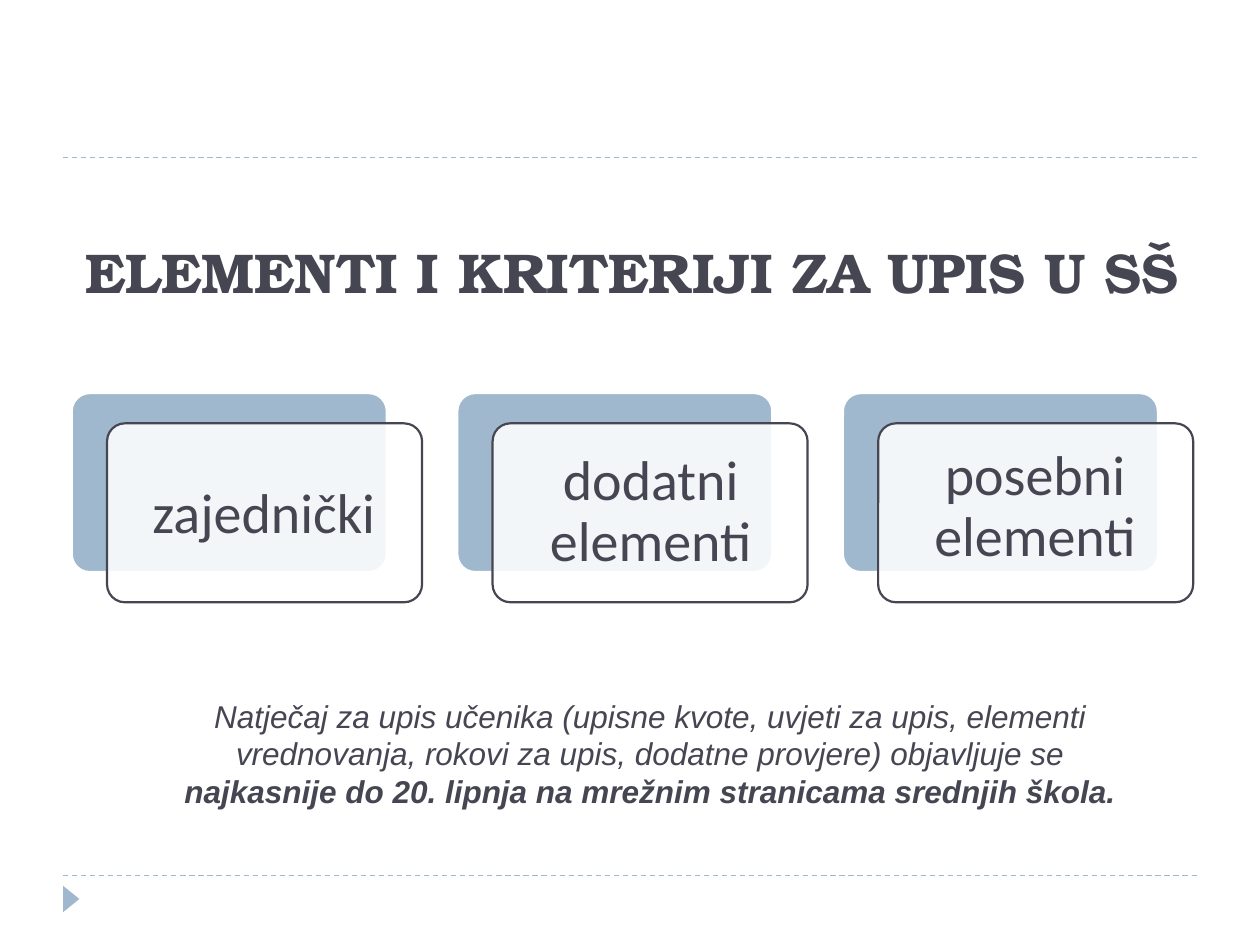
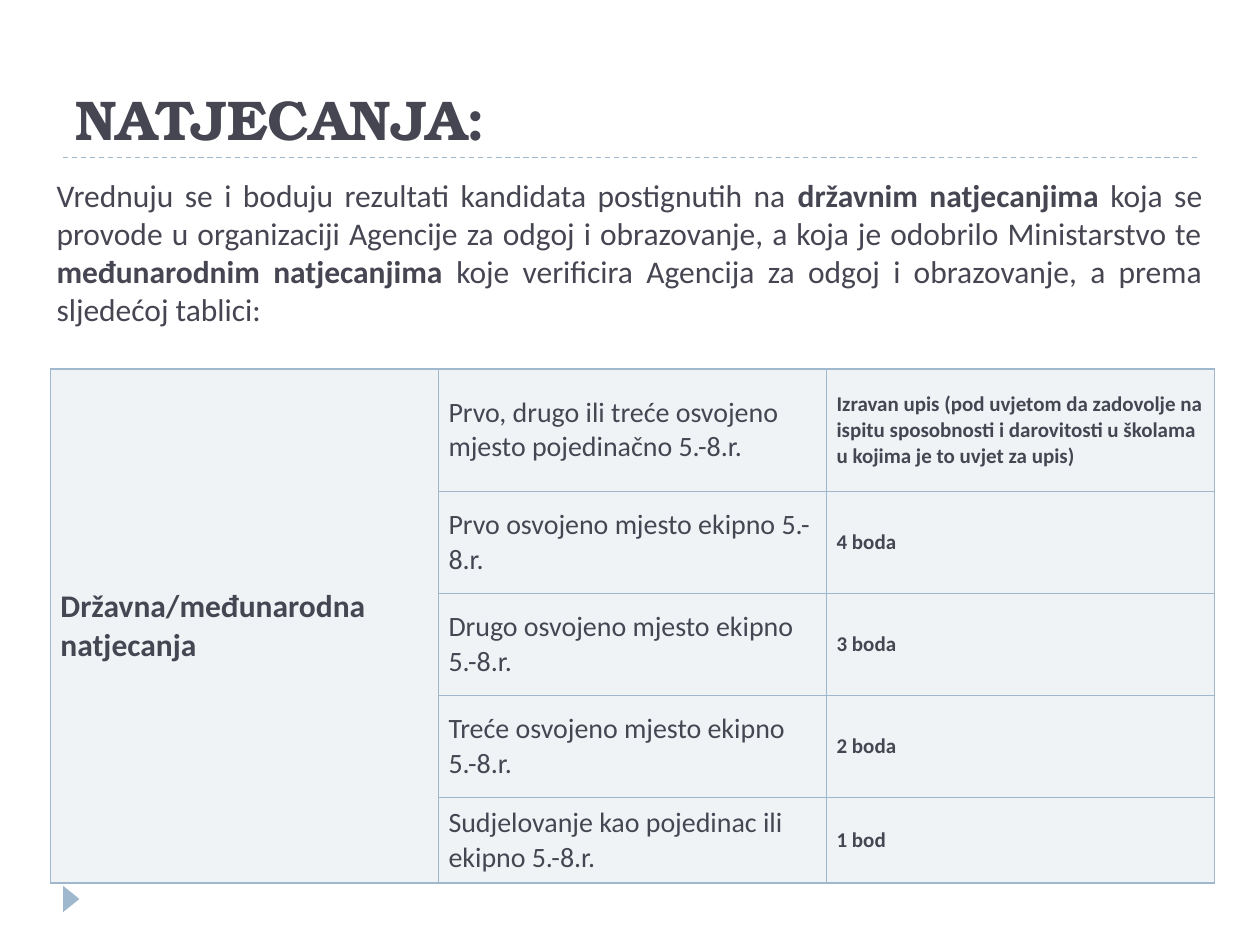
import pptx
import pptx.util
import pptx.dml.color
import pptx.enum.dml
import pptx.enum.shapes
import pptx.enum.text
import pptx.oxml.ns
from lxml import etree

Inches = pptx.util.Inches
Pt = pptx.util.Pt
qn = pptx.oxml.ns.qn
ALIGN = pptx.enum.text.PP_ALIGN
ANCHOR = pptx.enum.text.MSO_ANCHOR
SHAPE = pptx.enum.shapes.MSO_SHAPE

COLORS = {"ink": "464653", "blue": "9FB8CD", "white": "FFFFFF", "cell": "EFF3F6"}
TITLE_FONT, BODY_FONT, NOTE_FONT = "TeX Gyre Bonum", "Calibri", "Arial"
DIVIDERS = (6.95, 1.25)

CRITERIA_TITLE = "ELEMENTI I KRITERIJI ZA UPIS U SŠ"
CRITERIA = [
    ("zajednički", (0.73, 3.42, 2.73, 1.34)),
    ("dodatni elementi", (3.96, 3.4, 2.41, 1.34)),
    ("posebni elementi", (7.01, 3.36, 2.41, 1.34)),
]
CARD_LEFT, CARD_TOP, CARD_STEP = 0.57, 3.12, 3.06
CARD_SIZE = (2.5, 1.42)
FRONT_SHIFT = (0.28, 0.24)
DEADLINE = [
    ("Natječaj za upis učenika (upisne kvote, uvjeti za upis, elementi vrednovanja, "
     "rokovi za upis, dodatne provjere) objavljuje se ", False),
    ("najkasnije do 20. lipnja na mrežnim stranicama srednjih škola.", True),
]

CONTEST_TITLE = "NATJECANJA:"
CONTEST_INTRO = [
    ("Vrednuju se i boduju rezultati kandidata postignutih na ", False),
    ("državnim natjecanjima", True),
    (" koja se provode u organizaciji Agencije za odgoj i obrazovanje, "
     "a koja je odobrilo Ministarstvo te ", False),
    ("međunarodnim natjecanjima ", True),
    ("koje verificira Agencija za odgoj i obrazovanje, a prema sljedećoj tablici:", False),
]
CONTEST_LEVEL = "Državna/međunarodna natjecanja"
CONTEST_POINTS = [
    ("Prvo, drugo ili treće osvojeno mjesto pojedinačno 5.-8.r.",
     "Izravan upis (pod uvjetom da zadovolje na ispitu sposobnosti i darovitosti "
     "u školama u kojima je to uvjet za upis)"),
    ("Prvo osvojeno mjesto ekipno 5.-8.r.", "4 boda"),
    ("Drugo osvojeno mjesto ekipno 5.-8.r.", "3 boda"),
    ("Treće osvojeno mjesto ekipno 5.-8.r.", "2 boda"),
    ("Sudjelovanje kao pojedinac ili ekipno 5.-8.r.", "1 bod"),
]
ROW_HEIGHTS = (0.97, 0.81, 0.81, 0.81, 0.61)
COLUMN_WIDTH = 3.08
CELL_STYLES = [(18, True), (16, False), (12, True)]


def rgb(name):
    return pptx.dml.color.RGBColor.from_string(COLORS[name])


def write_runs(paragraph, runs, size, font, italic=None):
    for text, bold in runs:
        run = paragraph.add_run()
        run.text = text
        run.font.size = Pt(size)
        run.font.name = font
        run.font.bold = bold
        run.font.italic = italic
        run.font.color.rgb = rgb("ink")


def add_text(slide, box, runs, size, font, align, anchor=ANCHOR.TOP,
             inset=(0.1, 0.05), spacing=None, italic=None):
    frame = slide.shapes.add_textbox(*map(Inches, box)).text_frame
    frame.word_wrap = True
    frame.vertical_anchor = anchor
    frame.margin_left = frame.margin_right = Inches(inset[0])
    frame.margin_top = frame.margin_bottom = Inches(inset[1])
    paragraph = frame.paragraphs[0]
    paragraph.alignment = align
    paragraph.line_spacing = spacing
    write_runs(paragraph, runs, size, font, italic)


def add_filled(slide, kind, box, fill, line=None):
    shape = slide.shapes.add_shape(kind, *map(Inches, box))
    shape.shadow.inherit = False
    shape.fill.solid()
    shape.fill.fore_color.rgb = rgb(fill)
    if line:
        shape.line.color.rgb = rgb(line)
        shape.line.width = Pt(1.25)
    else:
        shape.line.fill.background()
    return shape


def start_slide(deck, title, title_box, title_align):
    slide = deck.slides.add_slide(deck.slide_layouts[6])
    for y in DIVIDERS:
        divider = slide.shapes.add_connector(
            pptx.enum.shapes.MSO_CONNECTOR.STRAIGHT,
            Inches(0.5), Inches(y), Inches(9.5), Inches(y))
        divider.line.color.rgb = rgb("blue")
        divider.line.width = Pt(0.75)
        divider.line.dash_style = pptx.enum.dml.MSO_LINE.DASH
        etree.SubElement(divider.element.spPr, qn("a:effectLst"))
    marker = add_filled(slide, SHAPE.ISOSCELES_TRIANGLE, (0.46, 7.07, 0.21, 0.13), "blue")
    marker.rotation = 90
    add_text(slide, title_box, [(title, True)], 32, TITLE_FONT, title_align, ANCHOR.BOTTOM)
    return slide


def add_card(slide, left, label, label_box):
    back_box = (left, CARD_TOP, *CARD_SIZE)
    front_box = (left + FRONT_SHIFT[0], CARD_TOP + FRONT_SHIFT[1], *CARD_SIZE)
    back = add_filled(slide, SHAPE.ROUNDED_RECTANGLE, back_box, "blue", "white")
    front = add_filled(slide, SHAPE.ROUNDED_RECTANGLE, front_box, "white", "ink")
    for layer in (back, front):
        layer.adjustments[0] = 0.1
    front_color = front.element.spPr.find(qn("a:solidFill")).find(qn("a:srgbClr"))
    etree.SubElement(front_color, qn("a:alpha"), val="88000")
    add_text(slide, label_box, [(label, None)], 32, BODY_FONT, ALIGN.CENTER,
             ANCHOR.MIDDLE, (0.19, 0.19), 0.9)


def style_cell(cell):
    cell.margin_left = cell.margin_right = Inches(0.08)
    cell.margin_top = cell.margin_bottom = Inches(0.04)
    cell.vertical_anchor = ANCHOR.MIDDLE
    properties = cell._tc.get_or_add_tcPr()
    for side in ("a:lnL", "a:lnR", "a:lnT", "a:lnB"):
        border = etree.SubElement(properties, qn(side), w=str(Pt(1)))
        border_fill = etree.SubElement(border, qn("a:solidFill"))
        etree.SubElement(border_fill, qn("a:srgbClr"), val=COLORS["blue"])
    cell.fill.solid()
    cell.fill.fore_color.rgb = rgb("cell")


def build_criteria(deck):
    slide = start_slide(deck, CRITERIA_TITLE, (0.52, 1.47, 9, 1), ALIGN.CENTER)
    for index, (label, label_box) in enumerate(CRITERIA):
        add_card(slide, CARD_LEFT + index * CARD_STEP, label, label_box)
    add_text(slide, (1.29, 5.48, 7.74, 1.01), DEADLINE, 18, NOTE_FONT,
             ALIGN.CENTER, italic=True)


def build_contests(deck):
    slide = start_slide(deck, CONTEST_TITLE, (0.5, 0.25, 9, 1), ALIGN.LEFT)
    add_text(slide, (0.35, 1.35, 9.29, 1.31), CONTEST_INTRO, 18, BODY_FONT, ALIGN.JUSTIFY)
    points = slide.shapes.add_table(
        len(CONTEST_POINTS), 3, Inches(0.4), Inches(2.93),
        Inches(3 * COLUMN_WIDTH), Inches(sum(ROW_HEIGHTS))).table
    points.first_row = points.horz_banding = False
    for column in points.columns:
        column.width = Inches(COLUMN_WIDTH)
    for row, height in zip(points.rows, ROW_HEIGHTS):
        row.height = Inches(height)
    for r, (achievement, reward) in enumerate(CONTEST_POINTS):
        level = CONTEST_LEVEL if r == 0 else ""
        for c, text in enumerate((level, achievement, reward)):
            cell = points.cell(r, c)
            style_cell(cell)
            if text:
                size, bold = CELL_STYLES[c]
                write_runs(cell.text_frame.paragraphs[0], [(text, bold)], size, BODY_FONT)
    points.cell(0, 0).merge(points.cell(len(CONTEST_POINTS) - 1, 0))


def main():
    deck = pptx.Presentation()
    deck.slide_width, deck.slide_height = Inches(10), Inches(7.5)
    build_criteria(deck)
    build_contests(deck)
    deck.save("out.pptx")


if __name__ == "__main__":
    main()
